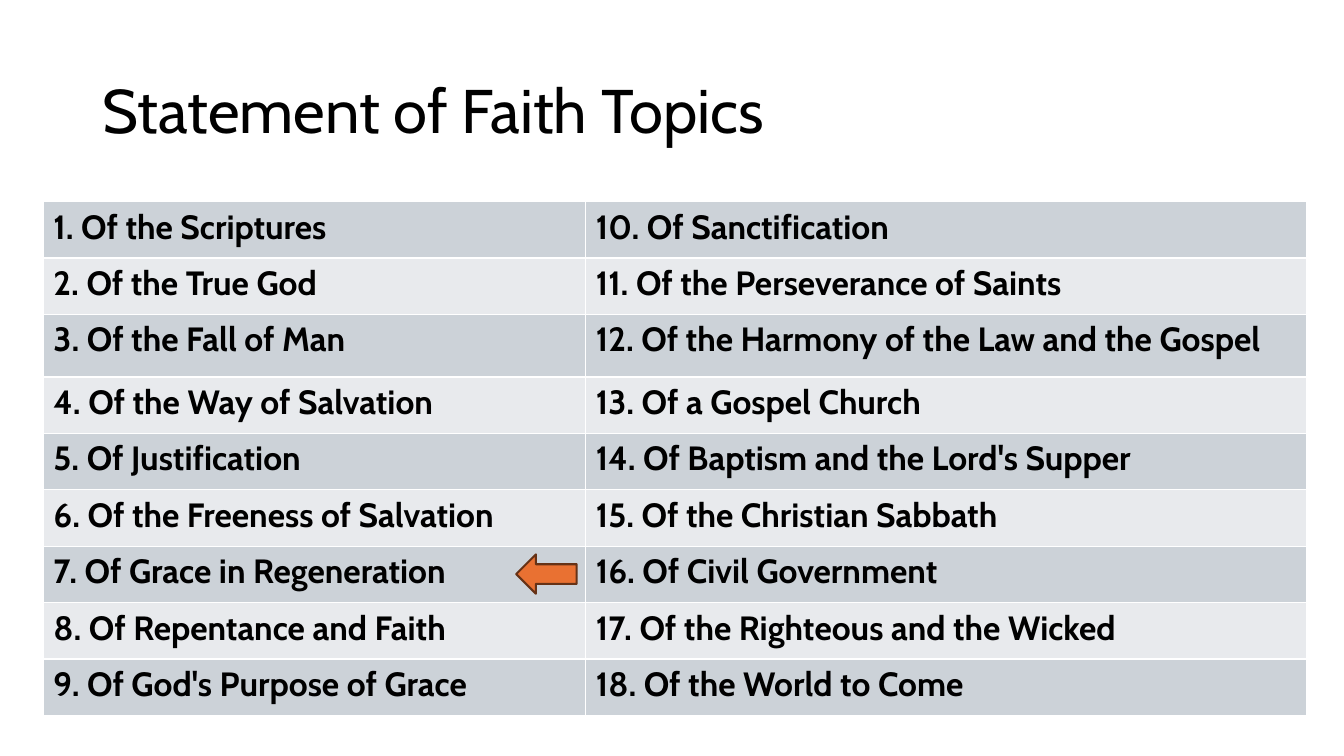
from pptx import Presentation
from pptx.dml.color import RGBColor
from pptx.enum.shapes import MSO_SHAPE
from pptx.enum.text import MSO_ANCHOR, PP_ALIGN
from pptx.util import Inches, Pt

LEFT_ARROW = MSO_SHAPE.LEFT_ARROW
MIDDLE = MSO_ANCHOR.MIDDLE
LEFT = PP_ALIGN.LEFT

BLACK = RGBColor(0x00, 0x00, 0x00)
DARK_BAND = RGBColor(0xCC, 0xD2, 0xD8)
LIGHT_BAND = RGBColor(0xE8, 0xEA, 0xED)
ORANGE = RGBColor(0xE9, 0x71, 0x32)
BROWN = RGBColor(0x66, 0x32, 0x16)
FONT = "Cabin"

TOPICS = [
    "Of the Scriptures",
    "Of the True God",
    "Of the Fall of Man",
    "Of the Way of Salvation",
    "Of Justification",
    "Of the Freeness of Salvation",
    "Of Grace in Regeneration",
    "Of Repentance and Faith",
    "Of God's Purpose of Grace",
    "Of Sanctification",
    "Of the Perseverance of Saints",
    "Of the Harmony of the Law and the Gospel",
    "Of a Gospel Church",
    "Of Baptism and the Lord's Supper",
    "Of the Christian Sabbath",
    "Of Civil Government",
    "Of the Righteous and the Wicked",
    "Of the World to Come",
]
ROWS = 9
COLUMN_WIDTHS = [5.38, 7.15]
ROW_HEIGHT = 0.56
TALL_ROW, TALL_HEIGHT = 2, 0.62


def style_text(para, size, bold):
    para.font.name = FONT
    para.font.size = Pt(size)
    para.font.bold = bold
    para.font.color.rgb = BLACK


deck = Presentation()
deck.slide_width, deck.slide_height = Inches(13.33), Inches(7.5)
page = deck.slides.add_slide(deck.slide_layouts[5])

# Title
title = page.shapes.title
title.left, title.top = Inches(0.92), Inches(0.4)
title.width, title.height = Inches(11.5), Inches(1.45)
title.text_frame.text = "Statement of Faith Topics"
title.text_frame.vertical_anchor = MIDDLE
heading = title.text_frame.paragraphs[0]
heading.alignment = LEFT
heading.line_spacing = 0.9
style_text(heading, 44, False)

# Topic table, numbered down each column; the table style draws white rules
table = page.shapes.add_table(
    ROWS, len(COLUMN_WIDTHS), Inches(0.43), Inches(2), Inches(12.53), Inches(5.1)
).table
table.first_row = False
table.horz_banding = False
for column, width in zip(table.columns, COLUMN_WIDTHS):
    column.width = Inches(width)
for row in table.rows:
    row.height = Inches(ROW_HEIGHT)
table.rows[TALL_ROW].height = Inches(TALL_HEIGHT)

for index, topic in enumerate(TOPICS):
    column_index, row_index = divmod(index, ROWS)
    cell = table.cell(row_index, column_index)
    cell.text = f"{index + 1}. {topic}"
    style_text(cell.text_frame.paragraphs[0], 24, True)
    cell.fill.solid()
    cell.fill.fore_color.rgb = LIGHT_BAND if row_index % 2 else DARK_BAND

# Arrow marking the current topic
arrow = page.shapes.add_shape(
    LEFT_ARROW, Inches(5.12), Inches(5.5), Inches(0.6), Inches(0.39)
)
arrow.shadow.inherit = False
arrow.fill.solid()
arrow.fill.fore_color.rgb = ORANGE
arrow.line.color.rgb = BROWN
arrow.line.width = Pt(1.5)

deck.save("out.pptx")
